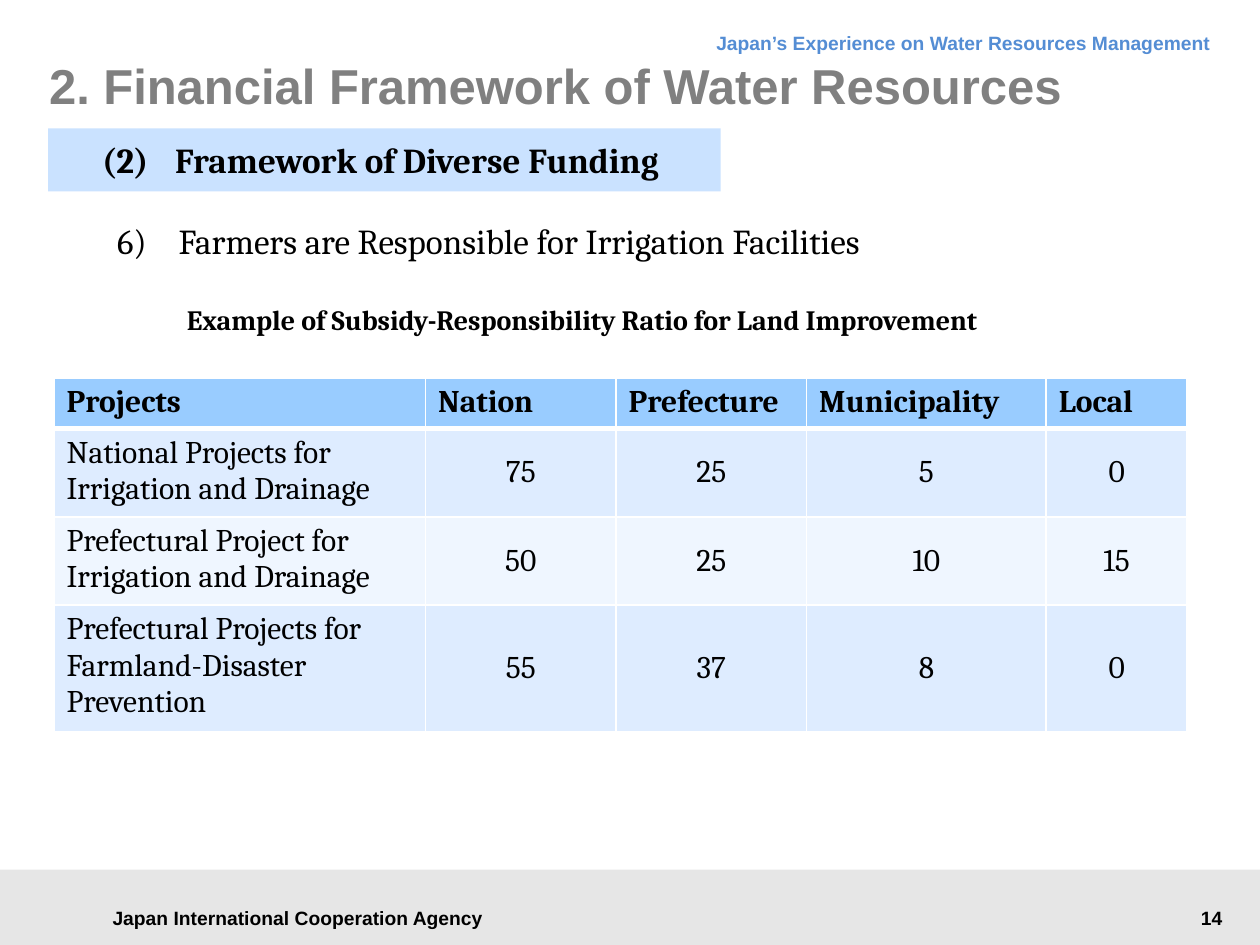
from lxml import etree
from pptx import Presentation
from pptx.dml.color import RGBColor
from pptx.enum.shapes import MSO_SHAPE
from pptx.enum.text import MSO_ANCHOR, PP_ALIGN
from pptx.oxml.ns import qn
from pptx.util import Cm, Pt

LEFT, CENTER, RIGHT = PP_ALIGN.LEFT, PP_ALIGN.CENTER, PP_ALIGN.RIGHT
TOP, MIDDLE = MSO_ANCHOR.TOP, MSO_ANCHOR.MIDDLE
RECTANGLE = MSO_SHAPE.RECTANGLE
HEADING_FONT, BODY_FONT = "Arial", "Cambria"
INSETS = (0.25, 0.13, 0.25, 0.13)
NO_INSETS = (0, 0, 0, 0)

COLUMN_WIDTHS = (7.49, 3.84, 3.84, 4.83, 2.84)
ROW_HEIGHTS = (1.02, 1.78, 1.78, 2.54)
RATIOS = (
    ("Projects", "Nation", "Prefecture", "Municipality", "Local"),
    ("National Projects for Irrigation and Drainage", "75", "25", "5", "0"),
    ("Prefectural Project for Irrigation and Drainage", "50", "25", "10", "15"),
    ("Prefectural Projects for Farmland-Disaster Prevention", "55", "37", "8", "0"),
)


def color(hex_value):
    """Return the colour for a hex string."""
    return RGBColor.from_string(hex_value)


def paint(target, hex_value):
    """Give a shape or cell a solid fill."""
    target.fill.solid()
    target.fill.fore_color.rgb = color(hex_value)


def write(frame, text, font, size, hex_value="000000", bold=False, align=LEFT, hanging=0):
    """Write one paragraph, optionally with a hanging indent, and return it."""
    paragraph = frame.paragraphs[0]
    paragraph.text = text
    paragraph.alignment = align
    if hanging:
        properties = paragraph._p.get_or_add_pPr()
        properties.set("marL", str(Cm(hanging)))
        properties.set("indent", str(-Cm(hanging)))
    paragraph.font.name = font
    paragraph.font.size = Pt(size)
    paragraph.font.bold = bold
    paragraph.font.color.rgb = color(hex_value)
    return paragraph


def fit_frame(frame, insets=INSETS, anchor=TOP):
    """Set wrapping, insets and anchor of a text frame."""
    frame.word_wrap = True
    frame.vertical_anchor = anchor
    frame.margin_left, frame.margin_top, frame.margin_right, frame.margin_bottom = map(Cm, insets)
    return frame


def add_text(slide, box, insets=INSETS, anchor=TOP):
    """Add a text box and return its frame."""
    return fit_frame(slide.shapes.add_textbox(*map(Cm, box)).text_frame, insets, anchor)


def add_band(slide, box, hex_value):
    """Add a borderless filled rectangle."""
    band = slide.shapes.add_shape(RECTANGLE, *map(Cm, box))
    band.shadow.inherit = False
    band.line.fill.background()
    paint(band, hex_value)
    return band


def add_borders(cell, bottom_width):
    """Draw white cell borders with the given bottom width."""
    properties = cell._tc.get_or_add_tcPr()
    for side, width in (("L", 1), ("R", 1), ("T", 1), ("B", bottom_width)):
        line = etree.SubElement(properties, qn(f"a:ln{side}"), w=str(Pt(width)))
        fill = etree.SubElement(line, qn("a:solidFill"))
        etree.SubElement(fill, qn("a:srgbClr"), val="FFFFFF")


def add_header(slide, box):
    """Place the series name above the slide title."""
    left, top, width, height = box
    series = add_text(slide, (left, top, width, 0.97))
    write(series, "Japan’s Experience on Water Resources Management",
          HEADING_FONT, 11, "548DD4", True, RIGHT).line_spacing = Pt(18)
    title = add_text(slide, (left, top + 0.38, width, height - 0.38), NO_INSETS, MIDDLE)
    write(title, "2. Financial Framework of Water Resources", HEADING_FONT, 28, "808080", True)


def add_section(slide, box):
    """Place the section banner and the numbered point under it."""
    left, top, width, height = box
    banner = add_band(slide, (left, top, 13.56, 1.27), "CAE2FF")
    heading = fit_frame(banner.text_frame, (1.09, 0.2, 0.7, 0.2), MIDDLE)
    write(heading, "(2)\tFramework of Diverse Funding", BODY_FONT, 20, bold=True, hanging=1.47)
    point = add_text(slide, (left + 1.14, top + 1.7, width - 1.14, height - 1.7))
    write(point, "6)\tFarmers are Responsible for Irrigation Facilities", BODY_FONT, 20, hanging=1.24)


def add_ratio_table(slide, box):
    """Place the caption and the table of subsidy ratios."""
    left, top, width, height = box
    caption = add_text(slide, (left + 2.42, top, 16.46, 0.56), NO_INSETS)
    write(caption, "Example of Subsidy-Responsibility Ratio for Land Improvement",
          BODY_FONT, 16, bold=True, align=CENTER).line_spacing = Pt(16)
    table = slide.shapes.add_table(
        len(RATIOS), len(COLUMN_WIDTHS), Cm(left), Cm(top + 1.4), Cm(width), Cm(height - 1.4)).table
    for column, column_width in zip(table.columns, COLUMN_WIDTHS):
        column.width = Cm(column_width)
    for row_index, (row, row_height, ratios) in enumerate(zip(table.rows, ROW_HEIGHTS, RATIOS)):
        row.height = Cm(row_height)
        is_heading = row_index == 0
        band_color = "99CCFF" if is_heading else ("EFF6FF", "DEECFF")[row_index % 2]
        for column_index, (cell, text) in enumerate(zip(row.cells, ratios)):
            is_ratio = not is_heading and column_index > 0
            add_borders(cell, 3 if is_heading else 1)
            paint(cell, band_color)
            cell.vertical_anchor = MIDDLE if is_ratio else TOP
            write(cell.text_frame, text, BODY_FONT, 18, bold=is_heading,
                  align=CENTER if is_ratio else LEFT)


def add_footer(slide, box):
    """Place the grey band with the agency name and page number."""
    left, top, width, height = box
    add_band(slide, box, "E6E6E6")
    agency = add_text(slide, (left + 1.8, top + 0.55, 8.41, 0.86), anchor=MIDDLE)
    write(agency, "Japan International Cooperation Agency", HEADING_FONT, 11, bold=True, align=CENTER)
    page_number = add_text(slide, (left + width - 4.5, top + 0.61, 3.99, 0.74))
    write(page_number, "14", HEADING_FONT, 11, bold=True, align=RIGHT)


def main():
    """Build and save the slide."""
    presentation = Presentation()
    presentation.slide_width, presentation.slide_height = Cm(25.4), Cm(19.05)
    slide = presentation.slides.add_slide(presentation.slide_layouts[6])
    add_footer(slide, (0, 17.53, 25.4, 1.52))
    add_header(slide, (0.99, 0.33, 23.67, 2.39))
    add_section(slide, (0.97, 2.59, 23.21, 2.82))
    add_ratio_table(slide, (1.09, 6.22, sum(COLUMN_WIDTHS), 1.4 + sum(ROW_HEIGHTS)))
    presentation.save("out.pptx")


if __name__ == "__main__":
    main()
